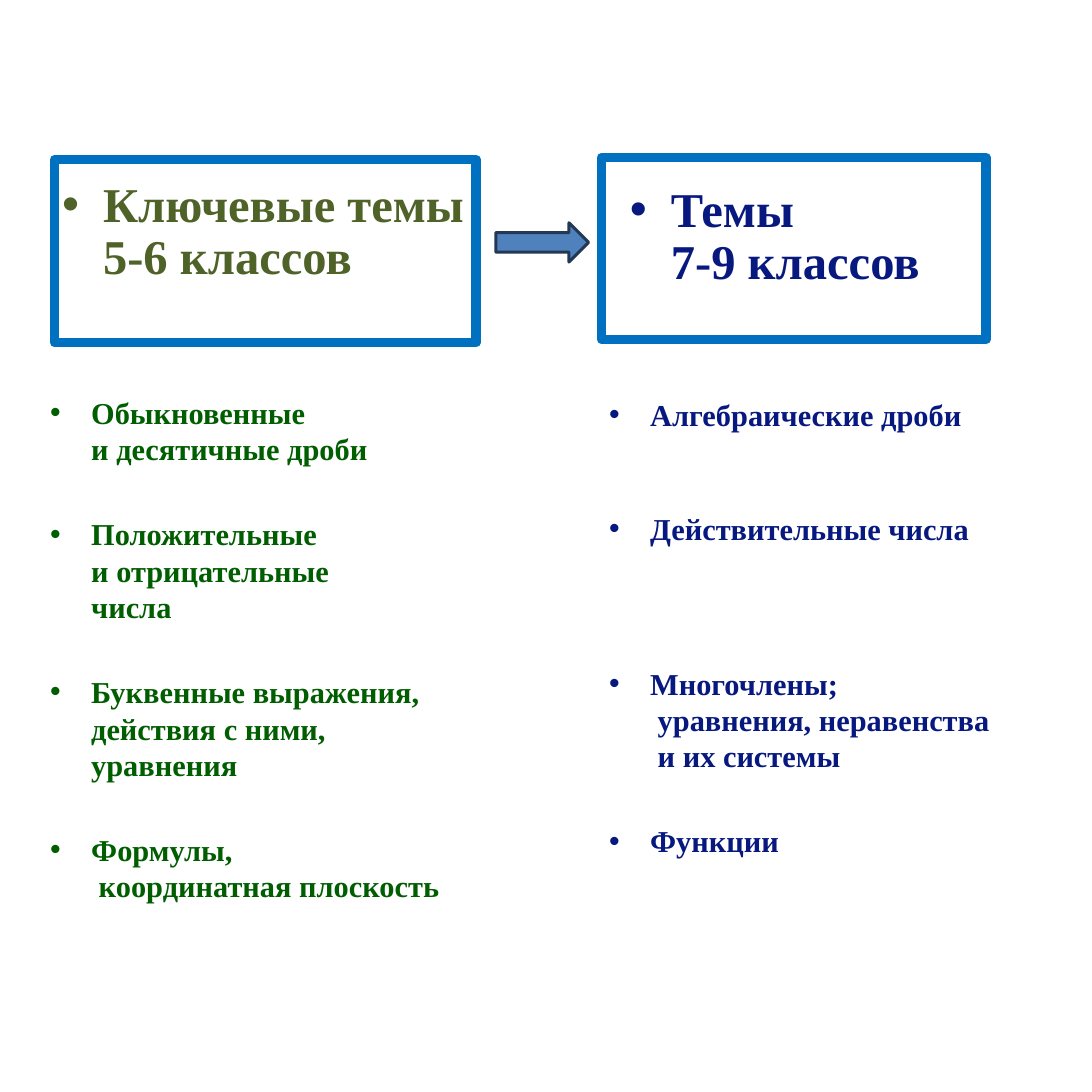
"""Build a slide that links the key topics of grades 5-6 to those of grades 7-9."""
from lxml import etree
from pptx import Presentation
from pptx.dml.color import RGBColor
from pptx.enum.shapes import MSO_SHAPE
from pptx.enum.text import MSO_ANCHOR, MSO_AUTO_SIZE, PP_ALIGN
from pptx.oxml.ns import qn
from pptx.util import Inches, Pt

RECTANGLE, ARROW = MSO_SHAPE.RECTANGLE, MSO_SHAPE.RIGHT_ARROW
TOP, NO_FIT, LEFT = MSO_ANCHOR.TOP, MSO_AUTO_SIZE.NONE, PP_ALIGN.LEFT
FONT = "Times New Roman"
COLORS = {"frame": "0070C0", "arrow": "4F81BD", "arrow_edge": "233953",
          "olive": "4F6228", "green": "005E00", "navy": "07187F"}
SIDE = Inches(10)
INDENT = int(SIDE * 0.0375)


def shares(*values):
    """Turn shares of the slide's side into lengths."""
    return [int(SIDE * value) for value in values]


def write_bullets(box, items, size, color, spacing):
    """Fill a box with bulleted paragraphs given as (text, space before)."""
    frame = box.text_frame
    frame.word_wrap = True
    frame.auto_size = NO_FIT
    frame.vertical_anchor = TOP
    for index, (text, gap) in enumerate(items):
        para = frame.paragraphs[0] if index == 0 else frame.add_paragraph()
        para.text = text
        para.alignment = LEFT
        para.line_spacing = spacing
        para.space_before = Pt(gap)
        props = para._p.get_or_add_pPr()
        props.set("marL", str(INDENT))
        props.set("indent", str(-INDENT))
        etree.SubElement(props, qn("a:buFont")).set("typeface", "Arial")
        etree.SubElement(props, qn("a:buChar")).set("char", "•")
        para.font.name = FONT
        para.font.size = Pt(size)
        para.font.bold = True
        para.font.color.rgb = RGBColor.from_string(COLORS[color])


deck = Presentation()
deck.slide_width = deck.slide_height = SIDE
page = deck.slides.add_slide(deck.slide_layouts[1])
title, junior_list = page.placeholders
title.element.getparent().remove(title.element)

junior_list.left, junior_list.top, junior_list.width, junior_list.height = shares(
    0.036, 0.356, 0.411, 0.531)
senior_list = page.shapes.add_textbox(*shares(0.548, 0.358, 0.411, 0.583))
junior_topics = [
    ("Обыкновенные\vи десятичные дроби", 0),
    ("Положительные\vи отрицательные\vчисла", 32),
    ("Буквенные выражения, действия с ними,\vуравнения", 32),
    ("Формулы,\v координатная плоскость", 32),
]
senior_topics = [
    ("Алгебраические дроби", 0),
    ("Действительные числа", 51),
    ("Многочлены;\v уравнения, неравенства\v и их системы", 78),
    ("Функции", 32),
]
write_bullets(junior_list, junior_topics, 20, "green", 1.0)
write_bullets(senior_list, senior_topics, 20, "navy", 1.0)

figures = [
    (RECTANGLE, (0.05, 0.146, 0.386, 0.168), None, "frame", 6),
    (RECTANGLE, (0.551, 0.144, 0.352, 0.167), None, "frame", 6),
    (ARROW, (0.454, 0.204, 0.085, 0.036), "arrow", "arrow_edge", 2),
]
for kind, place, fill, edge, weight in figures:
    figure = page.shapes.add_shape(kind, *shares(*place))
    figure.shadow.inherit = False
    if fill:
        figure.fill.solid()
        figure.fill.fore_color.rgb = RGBColor.from_string(COLORS[fill])
    else:
        figure.fill.background()
    figure.line.color.rgb = RGBColor.from_string(COLORS[edge])
    figure.line.width = Pt(weight)

headings = [
    ("Ключевые темы 5-6 классов", 0.047, 0.16, "olive"),
    ("Темы\v7-9 классов", 0.567, 0.165, "navy"),
]
for text, left, top, color in headings:
    heading = page.shapes.add_textbox(*shares(left, top, 0.389, 0.115))
    write_bullets(heading, [(text, 0)], 32, color, 0.9)

deck.save("out.pptx")
